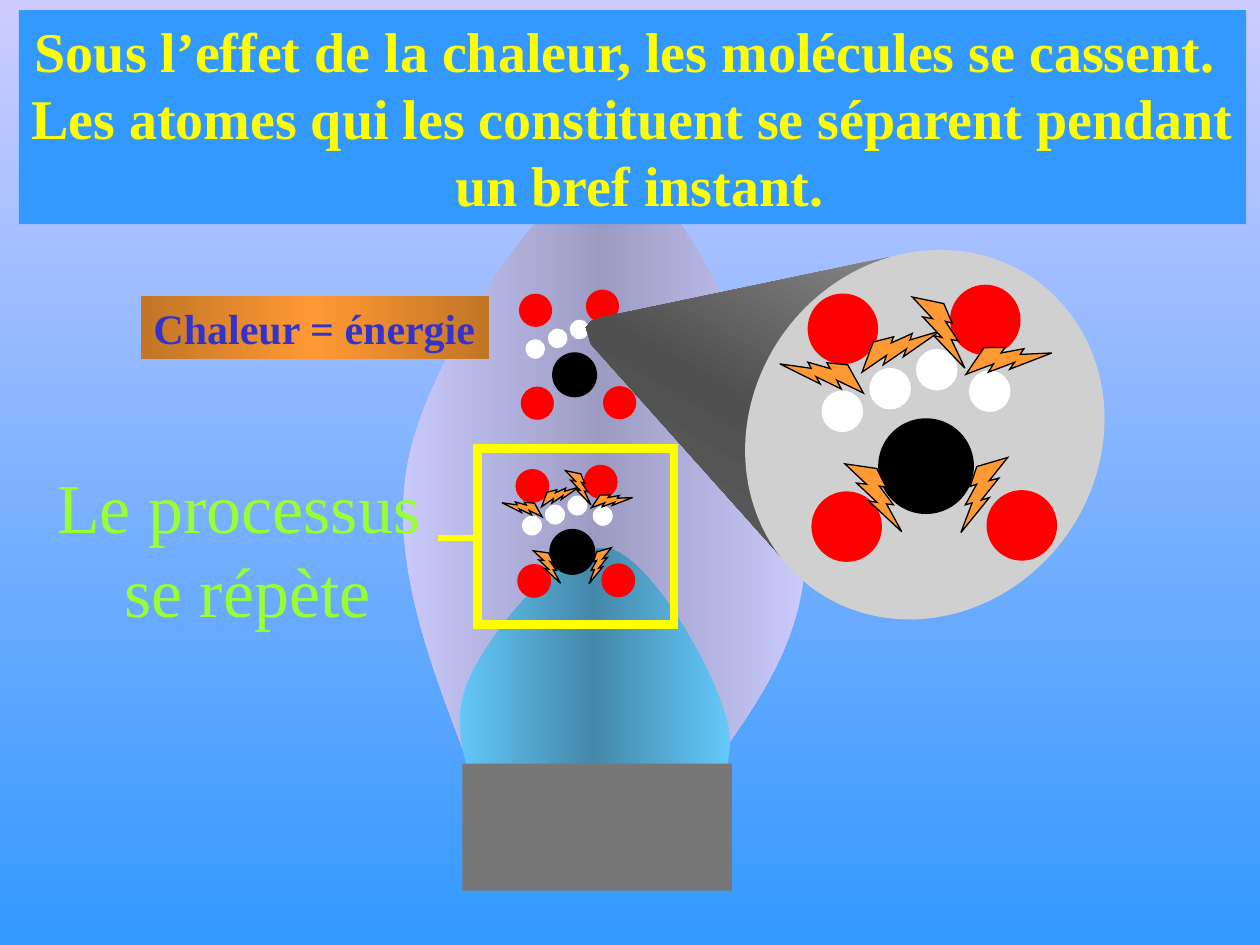
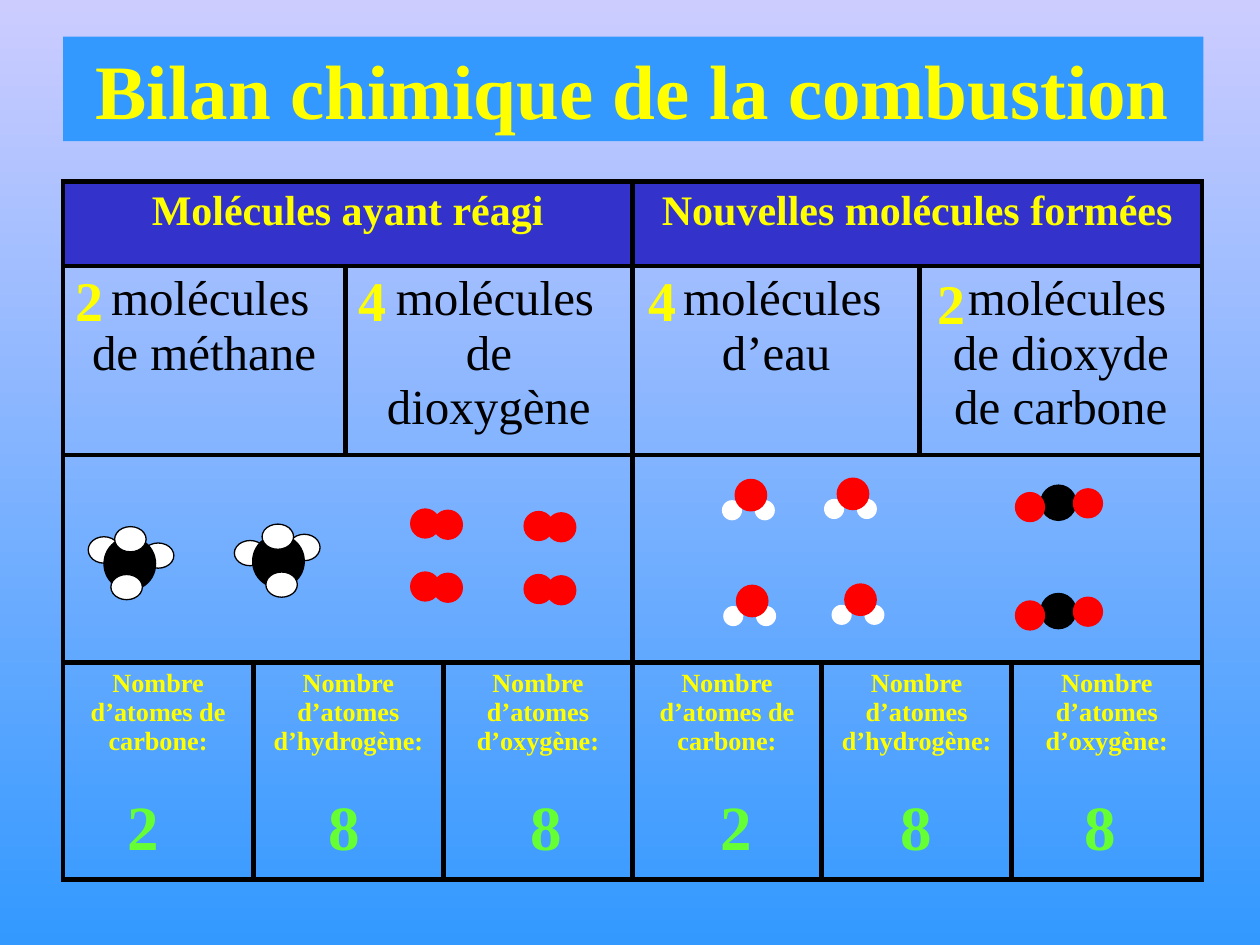
from copy import deepcopy
from itertools import product

from lxml.etree import SubElement
from pptx import Presentation
from pptx.dml.color import RGBColor
from pptx.enum.shapes import MSO_CONNECTOR, MSO_SHAPE
from pptx.enum.text import MSO_ANCHOR, MSO_AUTO_SIZE, PP_ALIGN
from pptx.oxml.ns import qn
from pptx.util import Inches, Pt

WIDTH, HEIGHT = Inches(10), Inches(7.5)
COLUMN, ROW = WIDTH / 10, HEIGHT / 7.5
FONT = "Times New Roman"
YELLOW, GREEN, LIME = "FFFF00", "66FF33", "99FF33"
BLUE, INDIGO, ORANGE = "3399FF", "3333CC", "FF9933"
RED, WHITE, BLACK = "FF0000", "FFFFFF", "000000"

ATOMS = [
    (RED, 1.34, 0.06, 0.56), (RED, 0.21, 0.13, 0.56),
    (RED, 0.24, 1.7, 0.56), (RED, 1.63, 1.69, 0.56),
    (WHITE, 0.32, 0.9, 0.33), (WHITE, 1.07, 0.57, 0.33),
    (WHITE, 1.49, 0.74, 0.33), (WHITE, 0.7, 0.72, 0.33),
    (BLACK, 0.77, 1.12, 0.76),
]
BOLTS = [
    (0.03, 0.59, 45.6, True), (0.61, 0.38, 305.9, False),
    (0.95, 0.22, 27.2, False), (1.47, 0.47, 319.7, False),
    (0.43, 1.53, 23.7, False), (1.28, 1.51, 328.3, True),
]
METHANE = [
    (WHITE, 0.43, 0.13, 0.25, 0.2, BLACK), (WHITE, 0, 0.08, 0.25, 0.21, BLACK),
    (BLACK, 0.12, 0.08, 0.42, 0.43, None), (WHITE, 0.21, 0, 0.25, 0.2, BLACK),
    (WHITE, 0.18, 0.38, 0.25, 0.2, BLACK),
]
OXYGEN = [(RED, 0, 0, 0.23, 0.23, RED), (RED, 0.18, 0.01, 0.23, 0.23, RED)]
WATER = [
    (WHITE, 0, 0.17, 0.16, 0.16, None), (WHITE, 0.26, 0.17, 0.16, 0.16, None),
    (RED, 0.1, 0, 0.26, 0.26, None),
]
CARBON_DIOXIDE = [
    (BLACK, 0.2, 0, 0.28, 0.28, BLACK), (RED, 0.46, 0.03, 0.23, 0.23, RED),
    (RED, 0, 0.06, 0.23, 0.23, RED),
]


def color(code):
    """Turn a hex string into a colour."""
    return RGBColor.from_string(code)


def place(left, top, width, height):
    """Turn grid columns and rows into slide lengths."""
    return [round(value * unit) for value, unit in
            zip((left, top, width, height), (COLUMN, ROW, COLUMN, ROW))]


def assign(target, values):
    """Set each attribute named in a dict."""
    for name, value in values.items():
        setattr(target, name, value)


def paint_gradient(fill, owner, codes, angle=0):
    """Spread the colours evenly along a linear gradient."""
    fill.gradient()
    fill.gradient_angle = angle
    stops = next(owner.iter(qn("a:gsLst")))
    while len(stops) < len(codes):
        stops.append(deepcopy(stops[0]))
    for index, (stop, code) in enumerate(zip(fill.gradient_stops, codes)):
        stop.color.rgb = color(code)
        stop.position = index / (len(codes) - 1)


def paint(shape, fill=None, line=None, weight=0.75, angle=0):
    """Give a shape a plain, graded or empty fill and an optional line."""
    shape.shadow.inherit = False
    if isinstance(fill, list):
        paint_gradient(shape.fill, shape.element, fill, angle)
    elif fill:
        shape.fill.solid()
        shape.fill.fore_color.rgb = color(fill)
    else:
        shape.fill.background()
    if line:
        shape.line.color.rgb = color(line)
        shape.line.width = Pt(weight)
        SubElement(shape.element.spPr.find(qn("a:ln")), qn("a:miter"), lim="800000")
    else:
        shape.line.fill.background()


def add_figure(page, kind, area, fill=None, line=None, weight=0.75, turn=0, flip=False):
    """Add a painted preset shape."""
    shape = page.shapes.add_shape(kind, *place(*area))
    paint(shape, fill, line, weight)
    shape.rotation = turn
    if flip:
        shape.element.spPr.find(qn("a:xfrm")).set("flipH", "1")


def write(frame, lines, size, code, bold=True, align=PP_ALIGN.CENTER):
    """Fill a text frame with one formatted paragraph per line."""
    for index, words in enumerate(lines):
        para = frame.paragraphs[0] if index == 0 else frame.add_paragraph()
        para.alignment = align
        span = para.add_run()
        span.text = words
        assign(span.font, {"name": FONT, "size": Pt(size), "bold": bold})
        span.font.color.rgb = color(code)


def add_label(page, area, lines, size, code, bold=True, align=PP_ALIGN.CENTER):
    """Add an unwrapped text box."""
    box = page.shapes.add_textbox(*place(*area))
    box.text_frame.word_wrap = False
    write(box.text_frame, lines, size, code, bold, align)
    return box


def add_title(page, area, lines, size):
    """Format the title as a blue band in front of the shapes so far."""
    title = page.shapes.title
    assign(title, dict(zip(("left", "top", "width", "height"), place(*area))))
    title.fill.solid()
    title.fill.fore_color.rgb = color(BLUE)
    assign(title.text_frame, {"word_wrap": True, "auto_size": MSO_AUTO_SIZE.NONE,
                              "vertical_anchor": MSO_ANCHOR.MIDDLE,
                              "margin_left": 0, "margin_right": 0})
    write(title.text_frame, lines, size, YELLOW)
    page.shapes.element.append(title.element)


def add_outline(page, points, fill, angle=0):
    """Add a filled outline through grid points."""
    spots = [(x * COLUMN, y * ROW) for x, y in points]
    builder = page.shapes.build_freeform(*spots[0])
    builder.add_line_segments(spots[1:], close=False)
    shape = builder.convert_to_shape()
    paint(shape, fill, angle=angle)
    return shape


def add_flame(page, points, fill):
    """Add a flame whose points after the first form cubic curves."""
    shape = add_outline(page, points, fill)
    outline = next(shape.element.iter(qn("a:path")))
    lines = outline.findall(qn("a:lnTo"))
    for index in range(0, len(lines), 3):
        curve = SubElement(outline, qn("a:cubicBezTo"))
        for line in lines[index:index + 3]:
            curve.append(line[0])
            outline.remove(line)


def add_atoms(page, left, top, scale):
    """Add the separated atoms at a given scale."""
    for fill, x, y, size in ATOMS:
        add_figure(page, MSO_SHAPE.OVAL,
                   (left + x * scale, top + y * scale, size * scale, size * scale), fill)


def add_bolts(page, left, top, scale):
    """Add the lightning bolts that split the molecules."""
    for x, y, turn, flip in BOLTS:
        area = (left + x * scale, top + y * scale, 0.63 * scale, 0.38 * scale)
        add_figure(page, MSO_SHAPE.LIGHTNING_BOLT, area, ORANGE, BLACK, 0.75, turn, flip)


def add_molecule(page, parts, left, top, mirror=False):
    """Add a molecule made of overlapping atoms."""
    span = max(x + width for _, x, _, width, _, _ in parts)
    for fill, x, y, width, height, line in parts:
        x = span - x - width if mirror else x
        add_figure(page, MSO_SHAPE.OVAL, (left + x, top + y, width, height), fill, line)


def add_line(page, start, end, code, weight):
    """Add a straight line without a shadow."""
    line = page.shapes.add_connector(MSO_CONNECTOR.STRAIGHT, *place(*start, *end))
    line.line.color.rgb = color(code)
    line.line.width = Pt(weight)
    SubElement(line.element.spPr, qn("a:effectLst"))


def border(cell, weight):
    """Draw black borders on the four sides of a cell."""
    properties = cell._tc.get_or_add_tcPr()
    for index, side in enumerate(("lnL", "lnR", "lnT", "lnB")):
        edge = properties.makeelement(qn(f"a:{side}"), {"w": str(Pt(weight))})
        fill = SubElement(edge, qn("a:solidFill"))
        SubElement(fill, qn("a:srgbClr"), val=BLACK)
        properties.insert(index, edge)


def add_balance_table(page, area, widths, heights, rows):
    """Add the table; each row lists (text, columns spanned) and its format."""
    table = page.shapes.add_table(len(heights), len(widths), *place(*area)).table
    assign(table, {"first_row": False, "horz_banding": False})
    for column, width in zip(table.columns, widths):
        column.width = round(width * COLUMN)
    for row, height in zip(table.rows, heights):
        row.height = round(height * ROW)
    for cell in table.iter_cells():
        cell.fill.background()
        border(cell, 3)
    for index, (cells, size, code, bold, fill) in enumerate(rows):
        start = 0
        for words, count in cells:
            cell = table.cell(index, start)
            if count > 1:
                cell.merge(table.cell(index, start + count - 1))
            if fill:
                cell.fill.solid()
                cell.fill.fore_color.rgb = color(fill)
            if words:
                write(cell.text_frame, [words], size, code, bold)
            start += count


def build_heat_page(page):
    """Show the flame, the broken molecules and the enlarged view."""
    add_flame(page, [(3.73, 6.09), (3.4, 5.23), (3.06, 4.37), (3.26, 3.57),
                     (3.45, 2.78), (4.42, 1.25), (4.93, 1.35),
                     (5.44, 1.44), (6.25, 3.34), (6.37, 4.14),
                     (6.48, 4.93), (6.06, 5.51), (5.65, 6.09)],
              ["CCCCFF", "9C9CC3", "CCCCFF"])
    add_flame(page, [(4.01, 6.77), (3.79, 6.33), (3.56, 5.89), (3.69, 5.48),
                     (3.82, 5.08), (4.47, 4.3), (4.81, 4.35),
                     (5.16, 4.4), (5.7, 5.37), (5.78, 5.77),
                     (5.85, 6.17), (5.57, 6.47), (5.3, 6.77)],
              ["66CCFF", "4488AA", "66CCFF"])
    add_figure(page, MSO_SHAPE.RECTANGLE, (3.67, 6.06, 2.14, 1.01), "777777")
    add_atoms(page, 4.02, 2.27, 0.47)
    add_title(page, (0.15, 0.08, 9.74, 1.7),
              ["Sous l’effet de la chaleur, les molécules se cassent. ",
               "Les atomes qui les constituent se séparent pendant",
               " un bref instant."], 32)
    add_outline(page, [(4.65, 2.6), (4.69, 2.55), (4.77, 2.52), (7.06, 2.04),
                       (7.3, 3.4), (6.21, 4.43), (4.69, 2.73)],
                ["8A8A8A", "505050", "606060"], 240)
    add_figure(page, MSO_SHAPE.OVAL, (5.96, 1.94, 2.76, 3.02), "D0D0D0", turn=36)
    add_atoms(page, 6.2, 2.2, 1)
    add_bolts(page, 6.2, 2.2, 1)
    heat = add_label(page, (1.12, 2.35, 2.76, 0.5), ["Chaleur = énergie"], 24, INDIGO,
                     align=PP_ALIGN.LEFT)
    paint(heat, ["C27527", ORANGE, "C27527"])
    add_figure(page, MSO_SHAPE.RECTANGLE, (3.79, 3.56, 1.56, 1.4), None, YELLOW, 5)
    process = add_label(page, (0.35, 3.63, 3.09, 1.43), ["Le processus", " se répète"],
                        40, LIME, False)
    process.text_frame.vertical_anchor = MSO_ANCHOR.MIDDLE
    add_line(page, (3.81, 4.27), (3.48, 4.27), YELLOW, 3)
    add_atoms(page, 3.99, 3.66, 0.48)
    add_bolts(page, 3.99, 3.66, 0.48)


def build_balance_page(page):
    """Compare the molecules and atoms before and after combustion."""
    add_title(page, (0.5, 0.29, 9.05, 0.83), ["Bilan chimique de la combustion"], 44)
    counts = [("Nombre d’atomes de carbone:", 1), ("Nombre d’atomes d’hydrogène:", 2),
              ("Nombre d’atomes d’oxygène:", 1)]
    names = ["de méthane", "de dioxygène", "d’eau", "de dioxyde de carbone"]
    molecules = [(f" molécules {name}", 2) for name in names]
    half = [1.51, 0.73, 0.78, 1.5]
    add_balance_table(
        page, (0.5, 1.44, 9.04, 5.54), half + half[::-1], [0.67, 1.5, 1.65, 1.72],
        [([("Molécules ayant réagi", 4), ("Nouvelles molécules formées", 4)],
          24, YELLOW, True, INDIGO),
         (molecules, 28, BLACK, False, None),
         ([("", 4), ("", 4)], 28, BLACK, False, None),
         (counts * 2, 15, YELLOW, True, None)])
    for digit, left, top in zip("2442", (0.5, 2.75, 5.05, 7.34), (2.06, 2.06, 2.06, 2.08)):
        add_label(page, (left, top, 0.42, 0.63), [digit], 32, YELLOW, align=PP_ALIGN.LEFT)
    for digit, left in zip("288288", (0.91, 2.51, 4.11, 5.62, 7.05, 8.51)):
        add_label(page, (left, 6.2, 0.45, 0.7), [digit], 36, GREEN)
    add_molecule(page, METHANE, 0.7, 4.18)
    add_molecule(page, METHANE, 1.86, 4.16, mirror=True)
    for column, row in product(range(2), repeat=2):
        add_molecule(page, OXYGEN, 3.26 + 0.9 * column, 4.04 + 0.5 * row + 0.02 * column)
    for left, top in ((5.73, 3.8), (6.54, 3.79), (5.74, 4.64), (6.6, 4.63)):
        add_molecule(page, WATER, left, top)
    for top in (3.85, 4.71):
        add_molecule(page, CARBON_DIOXIDE, 8.06, top)


def main():
    """Build and save the deck."""
    deck = Presentation()
    assign(deck, {"slide_width": WIDTH, "slide_height": HEIGHT})
    master = deck.slide_master
    paint_gradient(master.background.fill, master.element, ["CCCCFF", BLUE], 270)
    for build in (build_heat_page, build_balance_page):
        build(deck.slides.add_slide(deck.slide_layouts[5]))
    deck.save("out.pptx")


if __name__ == "__main__":
    main()
